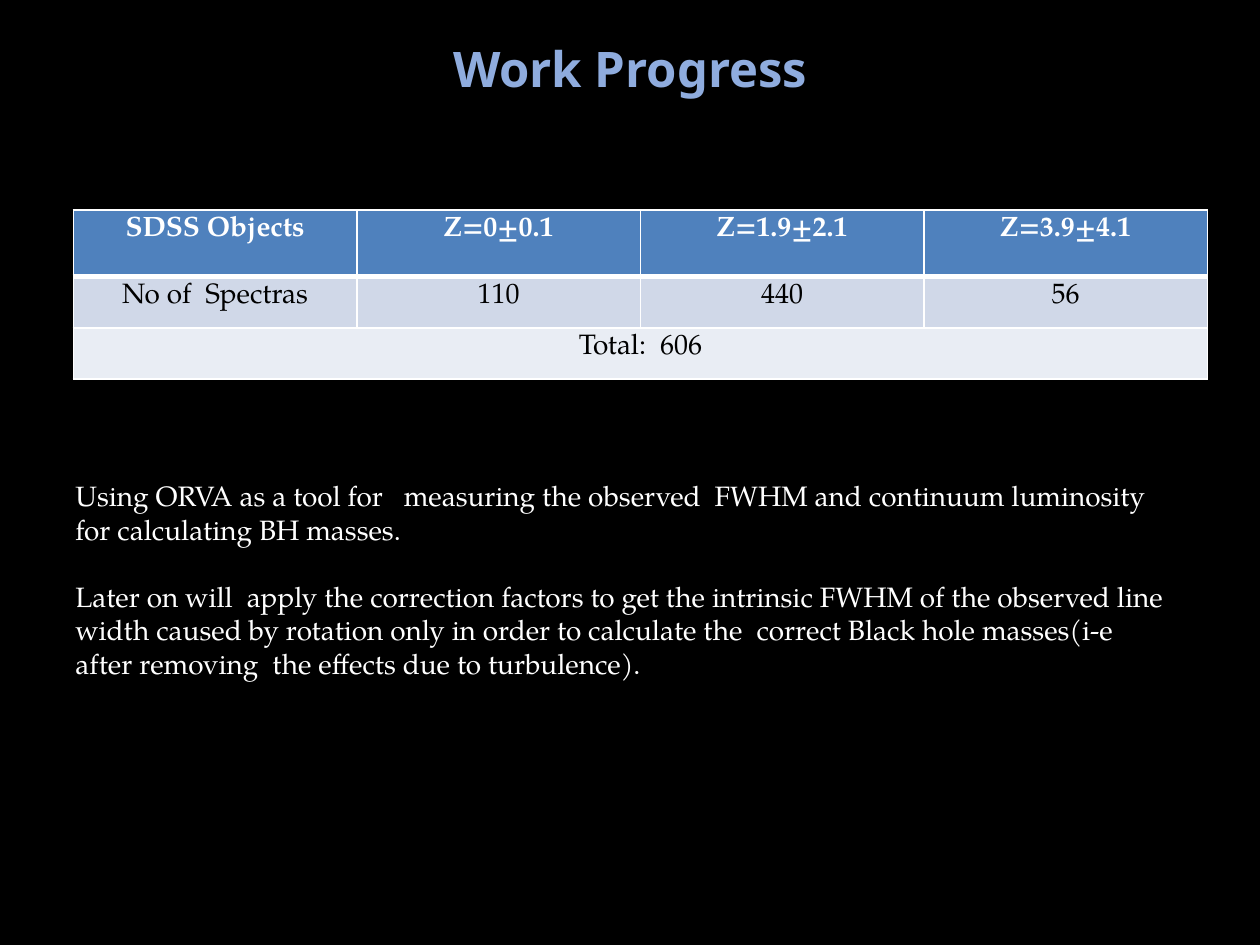
from lxml import etree
from pptx import Presentation
from pptx.dml.color import RGBColor
from pptx.enum.text import MSO_ANCHOR, PP_ALIGN
from pptx.oxml.ns import qn
from pptx.util import Cm, Pt

CENTER = PP_ALIGN.CENTER
LEFT = PP_ALIGN.LEFT
MIDDLE = MSO_ANCHOR.MIDDLE
TOP = MSO_ANCHOR.TOP

BLACK = RGBColor(0x00, 0x00, 0x00)
WHITE = RGBColor(0xFF, 0xFF, 0xFF)
TITLE_BLUE = RGBColor(0x8F, 0xAC, 0xDE)
HEADER_BLUE = RGBColor(0x4F, 0x81, 0xBD)
COUNT_BLUE = RGBColor(0xD0, 0xD8, 0xE8)
TOTAL_BLUE = RGBColor(0xE9, 0xED, 0xF4)

TITLE_FONT = "Noto Sans"
BODY_FONT = "TeX Gyre Pagella"

SPECTRA = [
    ["SDSS Objects", "Z=0±0.1", "Z=1.9±2.1", "Z=3.9±4.1"],
    ["No of  Spectras", "110", "440", "56"],
    ["Total:  606", "", "", ""],
]
ROW_STYLES = [
    (Cm(1.35), HEADER_BLUE, WHITE, True),
    (Cm(1.03), COUNT_BLUE, BLACK, False),
    (Cm(1.03), TOTAL_BLUE, BLACK, False),
]
PLANS = [
    "Using ORVA as a tool for   measuring the observed  FWHM and continuum "
    "luminosity for calculating BH masses.",
    "Later on will  apply the correction factors to get the intrinsic FWHM of "
    "the observed line width caused by rotation only in order to calculate the  "
    "correct Black hole masses(i-e after removing  the effects due to turbulence).",
]


def write(paragraph, text, font, size, color, bold=False, align=LEFT):
    paragraph.alignment = align
    run = paragraph.add_run()
    run.text = text
    run.font.name = font
    run.font.size = Pt(size)
    run.font.bold = bold
    run.font.color.rgb = color


def set_borders(cell, widths):
    properties = cell._tc.get_or_add_tcPr()
    for position, (side, width) in enumerate(widths.items()):
        line = etree.Element(qn(f"a:ln{side}"), w=str(Pt(width)))
        fill = etree.SubElement(line, qn("a:solidFill"))
        etree.SubElement(fill, qn("a:srgbClr"), val=str(WHITE))
        properties.insert(position, line)


def add_text_frame(slide, box, anchor):
    frame = slide.shapes.add_textbox(*box).text_frame
    frame.word_wrap = True
    frame.vertical_anchor = anchor
    return frame


def add_title(slide, box):
    frame = add_text_frame(slide, box, MIDDLE)
    write(frame.paragraphs[0], "Work Progress", TITLE_FONT, 28, TITLE_BLUE, True, CENTER)


def add_spectra_table(slide, left, top, width):
    height = sum(style[0] for style in ROW_STYLES)
    rows, columns = len(SPECTRA), len(SPECTRA[0])
    table = slide.shapes.add_table(rows, columns, left, top, width, height).table
    for r, (row_height, fill, color, bold) in enumerate(ROW_STYLES):
        table.rows[r].height = row_height
        widths = {"L": 1, "R": 1, "T": 3 if r == 1 else 1, "B": 3 if r == 0 else 1}
        for c, label in enumerate(SPECTRA[r]):
            cell = table.cell(r, c)
            cell.fill.solid()
            cell.fill.fore_color.rgb = fill
            set_borders(cell, widths)
            if label:
                write(cell.text_frame.paragraphs[0], label, BODY_FONT, 16, color, bold, CENTER)
    table.cell(rows - 1, 0).merge(table.cell(rows - 1, columns - 1))


def add_plans(slide, box):
    frame = add_text_frame(slide, box, TOP)
    for index, plan in enumerate(PLANS):
        paragraph = frame.add_paragraph() if index else frame.paragraphs[0]
        paragraph.space_before = Pt(19 if index else 0)
        write(paragraph, plan, BODY_FONT, 16, WHITE)


def main():
    presentation = Presentation()
    presentation.slide_width = Cm(25.4)
    presentation.slide_height = Cm(19.05)
    slide = presentation.slides.add_slide(presentation.slide_layouts[6])
    slide.background.fill.solid()
    slide.background.fill.fore_color.rgb = BLACK
    add_spectra_table(slide, Cm(1.48), Cm(4.23), Cm(22.86))
    add_plans(slide, (Cm(1.27), Cm(9.53), Cm(22.66), Cm(6.4)))
    add_title(slide, (Cm(4.87), Cm(0.62), Cm(15.66), Cm(1.48)))
    presentation.save("out.pptx")


if __name__ == "__main__":
    main()
